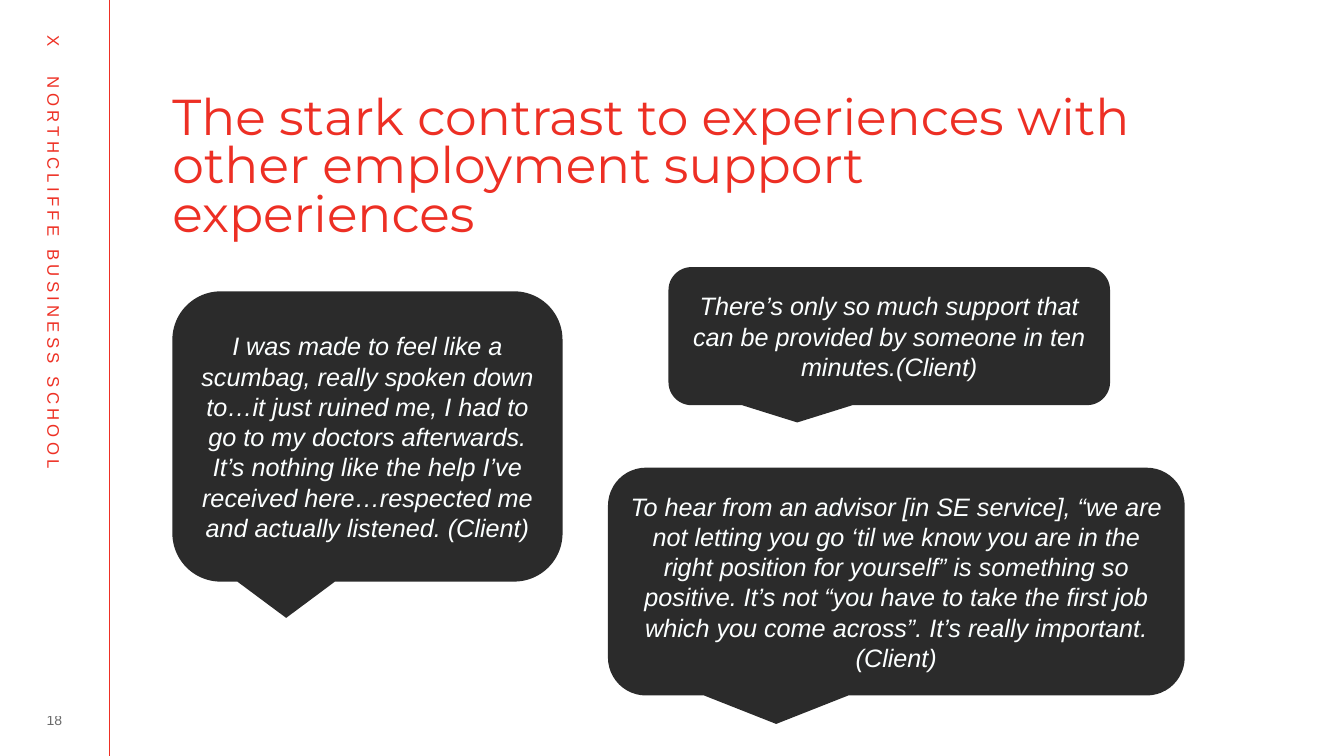
from lxml import etree
from pptx import Presentation
from pptx.dml.color import RGBColor
from pptx.enum.shapes import MSO_CONNECTOR, MSO_SHAPE
from pptx.enum.text import MSO_ANCHOR, MSO_AUTO_SIZE, PP_ALIGN
from pptx.oxml.ns import qn
from pptx.util import Inches, Pt

W, H = 13.33, 7.5
RED, TITLE_RED, DARK, PALE = "EE3024", "ED2F24", "2B2B2B", "FCFFFF"
RULE_X = 1.08
MARGIN = 1.71
TITLE = "The stark contrast to experiences with other employment support experiences"
SIDE_LABEL = ("X", "NORTHCLIFFE BUSINESS SCHOOL")
SIDE_TAB = 0.41
PAGE = "18"
QUOTES = [
    ("To hear from an advisor [in SE service], “we are not letting you go ‘til we know you "
     "are in the right position for yourself” is something so positive. It’s not “you have to "
     "take the first job which you come across”. It’s really important. (Client)",
     (6.03, 4.64, 5.72, 2.26)),
    ("There’s only so much support that can be provided by someone in ten minutes.(Client)",
     (6.63, 2.65, 4.38, 1.37)),
    ("I was made to feel like a scumbag, really spoken down to…it just ruined me, I had to go "
     "to my doctors afterwards. It’s nothing like the help I’ve received here…respected me "
     "and actually listened. (Client)",
     (MARGIN, 2.89, 3.87, 2.88)),
]


def rgb(value):
    """Turn a hex string into a colour."""
    return RGBColor.from_string(value)


def box(values):
    """Turn a tuple of inches into lengths."""
    return [Inches(v) for v in values]


def write(sp, text, size, color, font="Arial", align=PP_ALIGN.LEFT,
          anchor=MSO_ANCHOR.TOP, insets=(0.1, 0.05, 0.1, 0.05)):
    """Put one formatted paragraph in a shape and return it."""
    tf = sp.text_frame
    tf.word_wrap = True
    tf.auto_size = MSO_AUTO_SIZE.NONE
    tf.vertical_anchor = anchor
    tf.margin_left, tf.margin_top, tf.margin_right, tf.margin_bottom = box(insets)
    tf.text = text
    p = tf.paragraphs[0]
    p.alignment = align
    f = p.runs[0].font
    f.name, f.size = font, Pt(size)
    f.color.rgb = rgb(color)
    return p


def add_side(s):
    """Add the red rule, the turned label and the page number."""
    line = s.shapes.add_connector(MSO_CONNECTOR.STRAIGHT, *box((RULE_X, 0, RULE_X, H)))
    line.line.color.rgb = rgb(RED)
    line.line.width = Pt(0.5)
    etree.SubElement(line._element.spPr, qn("a:effectLst"))

    label = s.shapes.add_textbox(*box((-2.3, 2.94, 5.67, 0.3)))
    label.rotation = 90
    p = write(label, "\t".join(SIDE_LABEL), 12, RED)
    p.runs[0].font._element.set("spc", "300")
    tabs = etree.SubElement(p._p.get_or_add_pPr(), qn("a:tabLst"))
    etree.SubElement(tabs, qn("a:tab"), pos=str(Inches(SIDE_TAB)), algn="l")

    page = s.shapes.add_textbox(*box((0.26, 7.02, 0.56, 0.25)))
    p = write(page, PAGE, 10, DARK, align=PP_ALIGN.CENTER,
              anchor=MSO_ANCHOR.MIDDLE, insets=(0, 0, 0, 0))
    color = p.runs[0].font._element.find(".//" + qn("a:srgbClr"))
    etree.SubElement(color, qn("a:alpha"), val="70000")


def add_title(s):
    """Place and format the title placeholder."""
    title = s.shapes.title
    title.left, title.top, title.width, title.height = box((MARGIN, 0.75, 9.84, 1.9))
    p = write(title, TITLE, 36, TITLE_RED, font="Montserrat", insets=(0, 0.21, 0, 0))
    p.line_spacing = 0.8


def add_quote(s, text, place):
    """Add one speech bubble."""
    sp = s.shapes.add_shape(MSO_SHAPE.ROUNDED_RECTANGULAR_CALLOUT, *box(place))
    sp.shadow.inherit = False
    sp.fill.solid()
    sp.fill.fore_color.rgb = rgb(DARK)
    sp.line.fill.background()
    p = write(sp, text, 18, PALE, align=PP_ALIGN.CENTER, anchor=MSO_ANCHOR.MIDDLE)
    p.space_after = Pt(10)
    p.runs[0].font.italic = True


def main():
    """Build and save the slide."""
    prs = Presentation()
    prs.slide_width, prs.slide_height = box((W, H))
    s = prs.slides.add_slide(prs.slide_layouts[5])
    add_side(s)
    add_title(s)
    for text, place in QUOTES:
        add_quote(s, text, place)
    prs.save("out.pptx")


if __name__ == "__main__":
    main()
